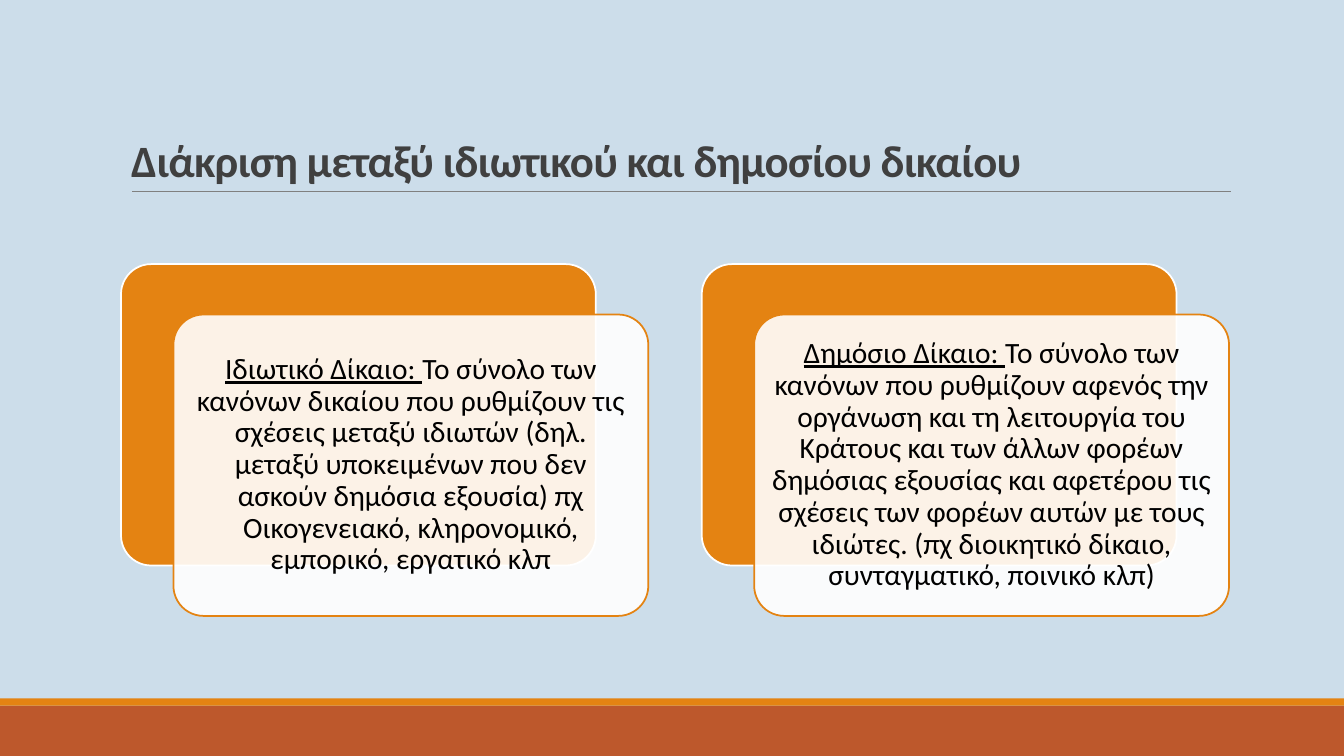
from lxml import etree
from pptx import Presentation
from pptx import util as u
from pptx.dml.color import RGBColor
from pptx.enum import shapes, text
from pptx.oxml import ns

PX = 9144  # 100 px to the inch
PAGE_W, PAGE_H = 1333, 750
ORANGE, RUST, WHITE = "E48312", "BD582C", "FFFFFF"

TITLE = "Διάκριση μεταξύ ιδιωτικού και δημοσίου δικαίου"
BRANCHES = [
    ("Ιδιωτικό Δίκαιο: ",
     "Το σύνολο των κανόνων δικαίου που ρυθμίζουν τις σχέσεις μεταξύ ιδιωτών "
     "(δηλ. μεταξύ υποκειμένων που δεν ασκούν δημόσια εξουσία) πχ "
     "Οικογενειακό, κληρονομικό, εμπορικό, εργατικό κλπ"),
    ("Δημόσιο Δίκαιο: ",
     "Το σύνολο των κανόνων που ρυθμίζουν αφενός την οργάνωση και τη λειτουργία "
     "του Κράτους και των άλλων φορέων δημόσιας εξουσίας και αφετέρου τις σχέσεις "
     "των φορέων αυτών με τους ιδιώτες. (πχ διοικητικό δίκαιο, συνταγματικό, "
     "ποινικό κλπ)"),
]


def emu(*lengths):
    return [u.Emu(length * PX) for length in lengths]


def colour(hex_text):
    return RGBColor.from_string(hex_text)


def apply(target, values):
    for name, value in values.items():
        setattr(target, name, value)


def add_span(para, words, size, hex_text, **values):
    span = para.add_run()
    span.text = words
    apply(span.font, {"name": "Calibri", "size": u.Pt(size), **values})
    span.font.color.rgb = colour(hex_text)
    return span


def add_block(page, kind, box, fill, line=None):
    block = page.shapes.add_shape(kind, *emu(*box))
    block.shadow.inherit = False
    block.fill.solid()
    block.fill.fore_color.rgb = colour(fill)
    if line:
        block.line.color.rgb = colour(line)
        block.line.width = u.Pt(1.25)
    else:
        block.line.fill.background()
    return block


def add_footer_bands(page, box):
    left, top, width, height = box
    stripe = 7
    rectangle = shapes.MSO_SHAPE.RECTANGLE
    add_block(page, rectangle, (left, top + stripe, width, height - stripe), RUST)
    add_block(page, rectangle, (left, top, width, stripe), ORANGE)


def add_title(page, box):
    """Fill the title placeholder and draw the rule along its lower edge."""
    left, top, width, height = box
    title = page.shapes.title
    apply(title, dict(zip(("left", "top", "width", "height"), emu(*box))))
    apply(title.text_frame, {
        "word_wrap": True,
        "auto_size": text.MSO_AUTO_SIZE.NONE,
        "vertical_anchor": text.MSO_ANCHOR.BOTTOM,
    })
    para = title.text_frame.paragraphs[0]
    apply(para, {"alignment": text.PP_ALIGN.LEFT, "line_spacing": 0.85})
    span = add_span(para, TITLE, 32, "404040", bold=True)
    span.font._element.set("spc", "-50")

    bottom = top + height
    rule = page.shapes.add_connector(
        shapes.MSO_CONNECTOR.STRAIGHT,
        *emu(left + 11, bottom, left + width + 1, bottom))
    rule.line.color.rgb = colour("808080")
    rule.line.width = u.Pt(0.5)
    etree.SubElement(rule._element.spPr, ns.qn("a:effectLst"))


def add_branch(page, box, term, definition):
    """Draw an orange card with a translucent text card offset over it."""
    left, top, width, height = box
    shift_x, shift_y = 52, 50
    size = (width - shift_x, height - shift_y)
    rounded = shapes.MSO_SHAPE.ROUNDED_RECTANGLE
    back = add_block(page, rounded, (left, top, *size), ORANGE, WHITE)
    front = add_block(page, rounded, (left + shift_x, top + shift_y, *size),
                      WHITE, ORANGE)
    for card in (back, front):
        card.adjustments[0] = 0.1
    fill = front._element.spPr.find(ns.qn("a:solidFill"))
    etree.SubElement(fill[0], ns.qn("a:alpha"), val="90000")

    frame = front.text_frame
    sides = ("margin_left", "margin_top", "margin_right", "margin_bottom")
    apply(frame, dict.fromkeys(sides, u.Emu(9 * PX)))
    apply(frame, {"word_wrap": True, "vertical_anchor": text.MSO_ANCHOR.MIDDLE})
    para = frame.paragraphs[0]
    apply(para, {"alignment": text.PP_ALIGN.CENTER, "line_spacing": 0.9})
    add_span(para, term, 21, "000000", underline=True)
    add_span(para, definition, 21, "000000", underline=False)


def add_branches(page, box):
    left, top, width, height = box
    gap = 53
    card_width = (width - gap * (len(BRANCHES) - 1)) // len(BRANCHES)
    for index, (term, definition) in enumerate(BRANCHES):
        card_left = left + index * (card_width + gap)
        add_branch(page, (card_left, top, card_width, height), term, definition)


def main():
    deck = Presentation()
    deck.slide_width, deck.slide_height = emu(PAGE_W, PAGE_H)
    page = deck.slides.add_slide(deck.slide_layouts.get_by_name("Title Only"))
    page.background.fill.solid()
    page.background.fill.fore_color.rgb = colour("CCDDEA")
    add_footer_bands(page, (0, 693, PAGE_W, 57))
    add_title(page, (120, 31, 1100, 159))
    add_branches(page, (120, 262, 1100, 349))
    deck.save("out.pptx")


if __name__ == "__main__":
    main()
